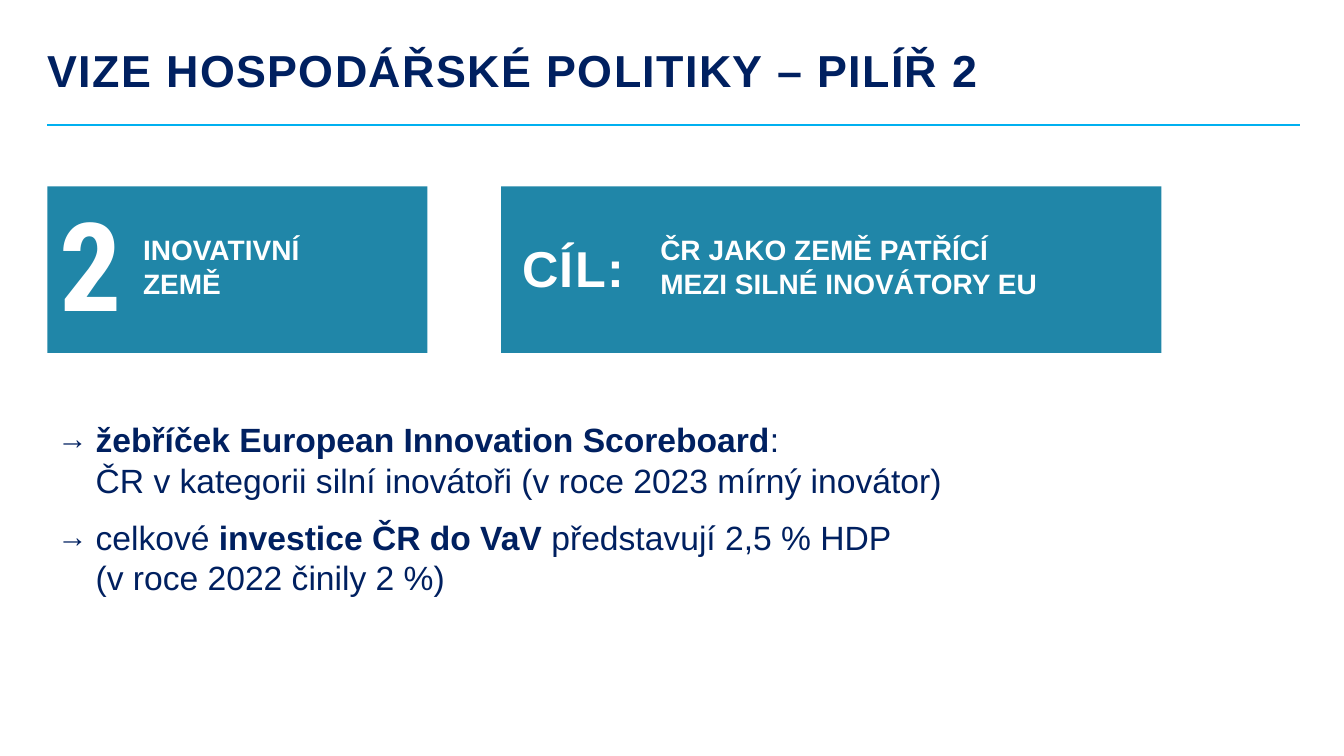
from lxml import etree
from pptx import Presentation
from pptx.dml.color import RGBColor
from pptx.enum.shapes import MSO_CONNECTOR, MSO_SHAPE
from pptx.enum.text import MSO_ANCHOR as Anchor, MSO_AUTO_SIZE as AutoSize, PP_ALIGN as Align
from pptx.oxml.ns import qn
from pptx.util import Inches, Pt

NAVY, TEAL, SKY, WHITE = "002060", "2086A8", "00B0F0", "FFFFFF"
LEFT = 0.47
CARD_TOP = 1.85


def color(value):
    return RGBColor.from_string(value)


def format_span(span, size, value, bold=True, font="Arial", spacing=None):
    span.font.name = font
    span.font.size = Pt(size)
    span.font.bold = bold
    span.font.color.rgb = color(value)
    if spacing:
        span.font._element.set("spc", str(spacing * 100))


def write_text(box, text, size, value, tight=False, **style):
    """Fill a box; tight text has no left inset, closer lines and wider letters."""
    frame = box.text_frame
    frame.text = text
    frame.word_wrap = True
    frame.auto_size = AutoSize.NONE
    frame.vertical_anchor = Anchor.MIDDLE
    if tight:
        frame.margin_left = 0
        style["spacing"] = 1
    for para in frame.paragraphs:
        para.alignment = Align.LEFT
        if tight:
            para.line_spacing = 0.9
        for span in para.runs:
            format_span(span, size, value, **style)


def add_header(page, left, top, width):
    title = page.shapes.title
    title.left, title.top = Inches(left), Inches(top)
    title.width, title.height = Inches(10.09), Inches(0.48)
    write_text(title, "VIZE HOSPODÁŘSKÉ POLITIKY – PILÍŘ 2", 32, NAVY, tight=True)

    rule_top = Inches(top + 0.76)
    rule = page.shapes.add_connector(
        MSO_CONNECTOR.STRAIGHT, Inches(left), rule_top, Inches(left + width), rule_top)
    rule.line.color.rgb = color(SKY)
    rule.line.width = Pt(1)
    etree.SubElement(rule._element.spPr, qn("a:effectLst"))


def add_block(group, left, top, width, height):
    block = group.shapes.add_shape(
        MSO_SHAPE.RECTANGLE, Inches(left), Inches(top), Inches(width), Inches(height))
    block.shadow.inherit = False
    block.fill.solid()
    block.fill.fore_color.rgb = color(TEAL)
    block.line.fill.background()
    return block


def add_card(page, left, top, width, indent, label, label_width, label_size, label_font,
             caption, caption_width):
    """Place a teal card with a large label and a caption to its right."""
    group = page.shapes.add_group_shape()
    add_block(group, left, top, width, 1.65)
    label_left = left + indent
    label_box = add_block(group, label_left, top + 0.19, label_width, 1.3)
    write_text(label_box, label, label_size, WHITE, tight=True, font=label_font)
    caption_box = add_block(group, label_left + label_width, top + 0.41, caption_width, 0.77)
    write_text(caption_box, caption, 20, WHITE)


def add_arrow_bullet(para):
    properties = para._p.get_or_add_pPr()
    properties.set("marL", str(Inches(0.38)))
    properties.set("indent", str(-Inches(0.38)))
    bullet_color = etree.SubElement(properties, qn("a:buClr"))
    etree.SubElement(bullet_color, qn("a:srgbClr"), val=NAVY)
    etree.SubElement(properties, qn("a:buSzPct"), val="90000")
    etree.SubElement(properties, qn("a:buFont"), typeface="Arial")
    etree.SubElement(properties, qn("a:buChar"), char="→")


def add_goals(page, left, top, width, height, goals):
    """List goals, each made of lines of (text, bold) spans."""
    box = page.shapes.add_textbox(Inches(left), Inches(top), Inches(width), Inches(height))
    frame = box.text_frame
    frame.word_wrap = True
    for number, lines in enumerate(goals):
        para = frame.add_paragraph() if number else frame.paragraphs[0]
        add_arrow_bullet(para)
        para.space_after = Pt(12)
        for row, line in enumerate(lines):
            if row:
                para.add_line_break()
            for text, bold in line:
                span = para.add_run()
                span.text = text
                format_span(span, 24, NAVY, bold)


def main():
    deck = Presentation()
    deck.slide_width, deck.slide_height = Inches(13.33), Inches(7.5)
    page = deck.slides.add_slide(deck.slide_layouts[5])

    add_header(page, LEFT, 0.48, 12.42)
    add_card(page, LEFT, CARD_TOP, 3.77, 0.12, "2", 0.73, 88, "Roboto Condensed",
             "INOVATIVNÍ\nZEMĚ", 2.75)
    add_card(page, 4.97, CARD_TOP, 6.55, 0.21, "CÍL:", 1.27, 36, "Arial",
             "ČR JAKO ZEMĚ PATŘÍCÍ\vMEZI SILNÉ INOVÁTORY EU", 4.78)
    add_goals(page, LEFT, 4.11, 11.71, 2.36, [
        [[("žebříček European Innovation Scoreboard", True), (":", False)],
         [("ČR v kategorii silní inovátoři (v roce 2023 mírný inovátor)", False)]],
        [[("celkové ", False), ("investice ČR do VaV ", True),
          ("představují 2,5 % HDP", False)],
         [("(v roce 2022 činily 2 %)", False)]],
    ])
    deck.save("out.pptx")


if __name__ == "__main__":
    main()
